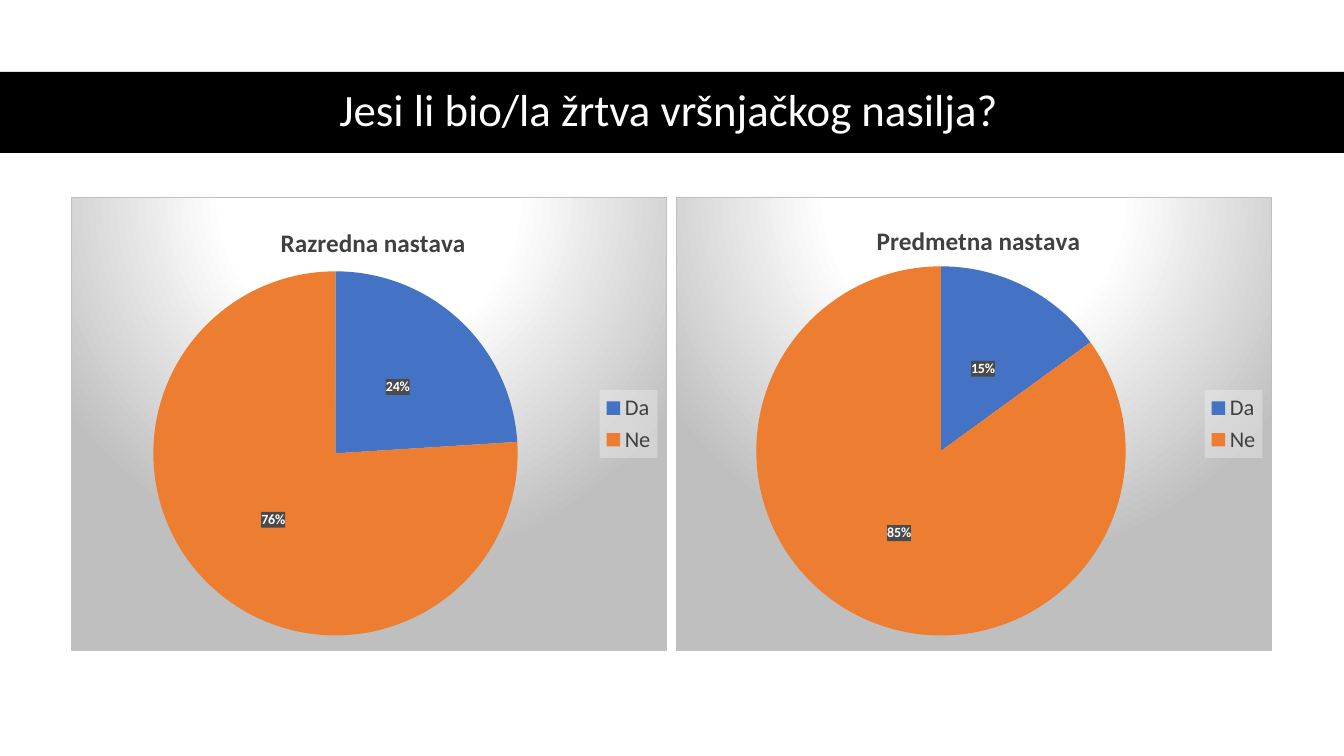
"""Build a slide comparing two pie charts on peer violence."""
from dataclasses import dataclass

from lxml import etree
from pptx import Presentation
from pptx.chart.data import CategoryChartData
from pptx.dml.color import RGBColor
from pptx.enum.chart import XL_CHART_TYPE, XL_LABEL_POSITION, XL_LEGEND_POSITION
from pptx.enum.shapes import MSO_SHAPE
from pptx.enum.text import MSO_ANCHOR, PP_ALIGN
from pptx.oxml import parse_xml
from pptx.util import Emu, Pt

PIE = XL_CHART_TYPE.PIE
LABEL_CENTER = XL_LABEL_POSITION.CENTER
LEGEND_RIGHT = XL_LEGEND_POSITION.RIGHT
RECTANGLE = MSO_SHAPE.RECTANGLE
MIDDLE = MSO_ANCHOR.MIDDLE
CENTER = PP_ALIGN.CENTER

EMU_PER_PX = 914400 / 100.8
FONT = "Calibri"
COLORS = {
    "band": "000000",
    "white": "FFFFFF",
    "gray": "BFBFBF",
    "text": "404040",
    "legend": "F2F2F2",
    "label": "4A4A4A",
    "Da": "4472C4",
    "Ne": "ED7D31",
}
ANSWERS = ("Da", "Ne")
NAMESPACES = (
    'xmlns:c="http://schemas.openxmlformats.org/drawingml/2006/chart" '
    'xmlns:a="http://schemas.openxmlformats.org/drawingml/2006/main"'
)


@dataclass(frozen=True)
class Box:
    left: int
    top: int
    width: int
    height: int

    def emu(self) -> tuple[Emu, ...]:
        return tuple(px(n) for n in (self.left, self.top, self.width, self.height))


@dataclass(frozen=True)
class Survey:
    title: str
    shares: tuple[int, int]
    frame: Box
    title_box: Box
    pie: Box


SURVEYS = (
    Survey("Razredna nastava", (24, 76), Box(71, 197, 596, 454),
           Box(205, 23, 186, 30), Box(82, 74, 365, 365)),
    Survey("Predmetna nastava", (15, 85), Box(676, 197, 596, 454),
           Box(196, 21, 204, 30), Box(80, 69, 370, 370)),
)
LEGEND = Box(529, 193, 58, 68)


def px(length: int) -> Emu:
    return Emu(round(length * EMU_PER_PX))


def rgb(name: str) -> RGBColor:
    return RGBColor.from_string(COLORS[name])


def style_font(font, size: int, color: str, bold: bool = False) -> None:
    font.name, font.size, font.bold = FONT, Pt(size), bold
    font.color.rgb = rgb(color)


def layout_xml(box: Box, frame: Box, target: str = "", sized: bool = True) -> etree._Element:
    parts = {"x": box.left / frame.width, "y": box.top / frame.height}
    modes = '<c:xMode val="edge"/><c:yMode val="edge"/>'
    if sized:
        parts |= {"w": box.width / frame.width, "h": box.height / frame.height}
    values = "".join(f'<c:{key} val="{part:.4f}"/>' for key, part in parts.items())
    return parse_xml(f"<c:layout {NAMESPACES}><c:manualLayout>{target}{modes}{values}"
                     "</c:manualLayout></c:layout>")


def place(parent, index: int, layout: etree._Element) -> None:
    for old in parent.xpath("c:layout"):
        parent.remove(old)
    parent.insert(index, layout)


def solid(color: str, alpha: int = 100) -> str:
    return (f'<a:solidFill><a:srgbClr val="{COLORS[color]}">'
            f'<a:alpha val="{alpha * 1000}"/></a:srgbClr></a:solidFill>')


def properties(content: str) -> etree._Element:
    return parse_xml(f"<c:spPr {NAMESPACES}>{content}</c:spPr>")


def background() -> etree._Element:
    stops = "".join(
        f'<a:gs pos="{position * 1000}"><a:srgbClr val="{COLORS[color]}"/></a:gs>'
        for position, color in ((0, "white"), (39, "white"), (100, "gray"))
    )
    return properties(
        f'<a:gradFill><a:gsLst>{stops}</a:gsLst><a:path path="circle">'
        '<a:fillToRect l="50000" t="-80000" r="50000" b="180000"/></a:path></a:gradFill>'
        f'<a:ln w="9525">{solid("gray")}</a:ln>'
    )


def draw_heading(page, text: str) -> None:
    band = page.shapes.add_shape(RECTANGLE, *Box(0, 72, 1344, 81).emu())
    band.shadow.inherit = False
    band.fill.solid()
    band.fill.fore_color.rgb = rgb("band")
    band.line.fill.background()
    heading = page.shapes.add_textbox(*Box(51, 71, 1236, 81).emu())
    frame = heading.text_frame
    frame.word_wrap = True
    frame.vertical_anchor = MIDDLE
    frame.text = text
    para = frame.paragraphs[0]
    para.alignment = CENTER
    para.line_spacing = 0.9
    style_font(para.runs[0].font, 32, "white")


def draw_pie(page, survey: Survey) -> None:
    data = CategoryChartData()
    data.categories = ANSWERS
    data.add_series("Series 1", survey.shares)
    chart = page.shapes.add_chart(PIE, *survey.frame.emu(), data).chart
    style_font(chart.font, 10, "band")

    chart.has_title = True
    title = chart.chart_title
    title.text_frame.text = survey.title
    style_font(title.text_frame.paragraphs[0].runs[0].font, 18, "text", bold=True)
    title.include_in_layout = False

    chart.has_legend = True
    legend = chart.legend
    legend.position = LEGEND_RIGHT
    legend.include_in_layout = False
    style_font(legend.font, 16, "text")

    plot = chart.plots[0]
    plot.vary_by_categories = True
    for index, answer in enumerate(ANSWERS):
        fill = plot.series[0].points[index].format.fill
        fill.solid()
        fill.fore_color.rgb = rgb(answer)
    plot.has_data_labels = True
    labels = plot.data_labels
    labels.show_percentage = True
    labels.show_value = False
    labels.number_format = "0%"
    labels.number_format_is_linked = False
    labels.position = LABEL_CENTER
    style_font(labels.font, 10, "white", bold=True)

    root = chart.element if hasattr(chart, "element") else chart._chartSpace
    inner = '<c:layoutTarget val="inner"/>'
    place(root.xpath("c:chart/c:plotArea")[0], 0, layout_xml(survey.pie, survey.frame, inner))
    place(root.xpath("c:chart/c:title")[0], 1,
          layout_xml(survey.title_box, survey.frame, sized=False))
    legend_node = root.xpath("c:chart/c:legend")[0]
    place(legend_node, 1, layout_xml(LEGEND, survey.frame))
    legend_node.xpath("c:txPr")[0].addprevious(properties(solid("legend", 39)))
    root.xpath(".//c:dLbls/c:txPr")[0].addprevious(properties(solid("label")))
    root.xpath("c:chart")[0].addnext(background())


def main() -> None:
    deck = Presentation()
    deck.slide_width, deck.slide_height = px(1344), px(756)
    page = deck.slides.add_slide(deck.slide_layouts[6])
    draw_heading(page, "Jesi li bio/la žrtva vršnjačkog nasilja?")
    for survey in SURVEYS:
        draw_pie(page, survey)
    deck.save("out.pptx")


if __name__ == "__main__":
    main()
